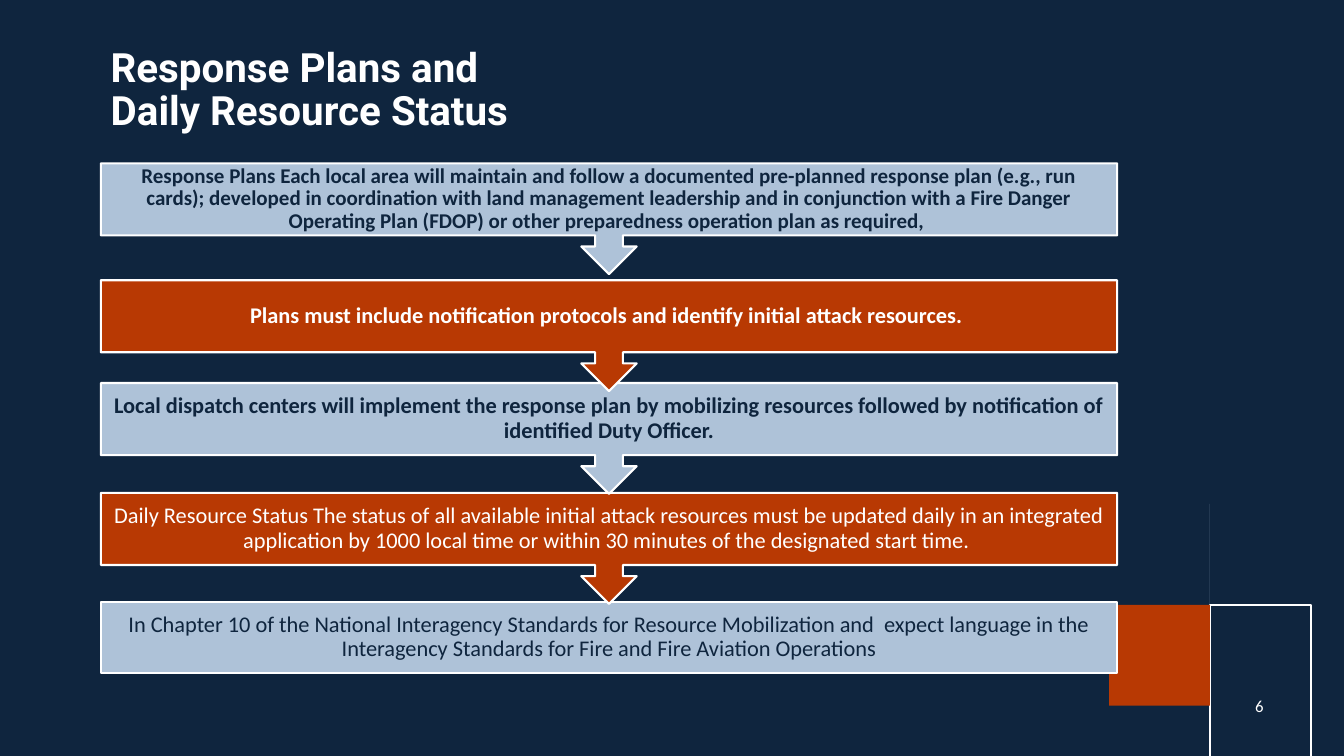
from pptx import Presentation
from pptx.dml.color import RGBColor
from pptx.enum.shapes import MSO_SHAPE as Preset
from pptx.enum.text import MSO_ANCHOR as Anchor, PP_ALIGN as Align
from pptx.util import Inches, Pt

NAVY = RGBColor(0x0F, 0x25, 0x3E)
PALE_BLUE = RGBColor(0xAE, 0xC2, 0xD8)
HEXAGON_BLUE = RGBColor(0xAE, 0xC1, 0xD8)
RUST = RGBColor(0xB8, 0x39, 0x03)
WHITE = RGBColor(0xFF, 0xFF, 0xFF)

STEP_LEFT, STEP_WIDTH = 1, 10.08
BODY_HEIGHT, CALLOUT_HEIGHT = 0.71, 1.1

# Steps: top, text size, bold, text
STEPS = [
    (1.62, 15, True,
     "Response Plans Each local area will maintain and follow a documented "
     "pre-planned response plan (e.g., run cards); developed in coordination "
     "with land management leadership and in conjunction with a Fire Danger "
     "Operating Plan (FDOP) or other preparedness operation plan as required, "),
    (2.78, 16, True,
     "Plans must include notification protocols and identify initial attack "
     "resources. "),
    (3.8, 16, True,
     "Local dispatch centers will implement the response plan by mobilizing "
     "resources followed by notification of identified Duty Officer."),
    (4.89, 16, False,
     "Daily Resource Status The status of all available initial attack "
     "resources must be updated daily in an integrated application by 1000 "
     "local time or within 30 minutes of the designated start time. "),
    (5.97, 16, False,
     "In Chapter 10 of the National Interagency Standards for Resource "
     "Mobilization and  expect language in the Interagency Standards for Fire "
     "and Fire Aviation Operations"),
]

SMALL_HEXAGON = [(11.87, 5.1), (12.2, 5.29), (12.2, 5.66),
                 (11.87, 5.85), (11.54, 5.66), (11.54, 5.29)]
LARGE_HEXAGON = [(12.6, 5.63), (13.33, 6.04), (13.33, 7.5),
                 (11.56, 7.5), (11.51, 7.47), (11.51, 6.25)]
MEDIUM_HEXAGON = [(11.54, 5.85), (11.95, 6.08), (11.95, 6.55),
                  (11.54, 6.78), (11.13, 6.55), (11.13, 6.08)]


def style_shape(shape, fill=None, line=None):
    shape.shadow.inherit = False
    if fill is None:
        shape.fill.background()
    else:
        shape.fill.solid()
        shape.fill.fore_color.rgb = fill
    if line is None:
        shape.line.fill.background()
    else:
        shape.line.color.rgb = line
        shape.line.width = Pt(1.5)


def add_hexagon(slide, points, fill=None, line=None):
    builder = slide.shapes.build_freeform(*points[0], scale=Inches(1))
    builder.add_line_segments(points[1:], close=True)
    style_shape(builder.convert_to_shape(), fill, line)


def add_text(slide, box, text, size, color, font="Calibri", bold=False,
             align=Align.CENTER, anchor=Anchor.MIDDLE, spacing=None, inset=None):
    frame = slide.shapes.add_textbox(*map(Inches, box)).text_frame
    frame.word_wrap = True
    frame.vertical_anchor = anchor
    if inset is not None:
        frame.margin_left = frame.margin_right = Inches(inset)
        frame.margin_top = frame.margin_bottom = Inches(inset)
    paragraph = frame.paragraphs[0]
    paragraph.text = text
    paragraph.alignment = align
    paragraph.line_spacing = spacing
    paragraph.font.name = font
    paragraph.font.size = Pt(size)
    paragraph.font.bold = bold
    paragraph.font.color.rgb = color


def add_step(slide, top, size, bold, text, fill, text_color, is_last):
    preset = Preset.RECTANGLE if is_last else Preset.UP_ARROW_CALLOUT
    height = BODY_HEIGHT if is_last else CALLOUT_HEIGHT
    shape = slide.shapes.add_shape(preset, Inches(STEP_LEFT), Inches(top),
                                   Inches(STEP_WIDTH), Inches(height))
    shape.rotation = 0 if is_last else 180
    style_shape(shape, fill, WHITE)
    add_text(slide, (STEP_LEFT, top, STEP_WIDTH, BODY_HEIGHT), text, size,
             text_color, bold=bold, spacing=0.9, inset=0.12)


def main():
    presentation = Presentation()
    presentation.slide_width = Inches(13.33)
    presentation.slide_height = Inches(7.5)
    slide = presentation.slides.add_slide(presentation.slide_layouts[6])
    slide.background.fill.solid()
    slide.background.fill.fore_color.rgb = NAVY

    # Corner decoration
    add_hexagon(slide, SMALL_HEXAGON, fill=HEXAGON_BLUE)
    add_hexagon(slide, LARGE_HEXAGON, line=WHITE)
    add_hexagon(slide, MEDIUM_HEXAGON, fill=RUST)

    # Title and slide number
    add_text(slide, (1, 0.42, 4.83, 1.2),
             "Response Plans and Daily Resource Status", 28.8, WHITE,
             font="Roboto", bold=True, align=Align.LEFT, anchor=Anchor.TOP,
             spacing=0.9)
    add_text(slide, (12.24, 6.8, 0.5, 0.4), "6", 12, WHITE)

    # Process steps, drawn upwards so each arrow overlaps the step below
    for index, step in reversed(list(enumerate(STEPS))):
        fill, text_color = (RUST, WHITE) if index % 2 else (PALE_BLUE, NAVY)
        add_step(slide, *step, fill, text_color, index == len(STEPS) - 1)

    presentation.save("out.pptx")


if __name__ == "__main__":
    main()
